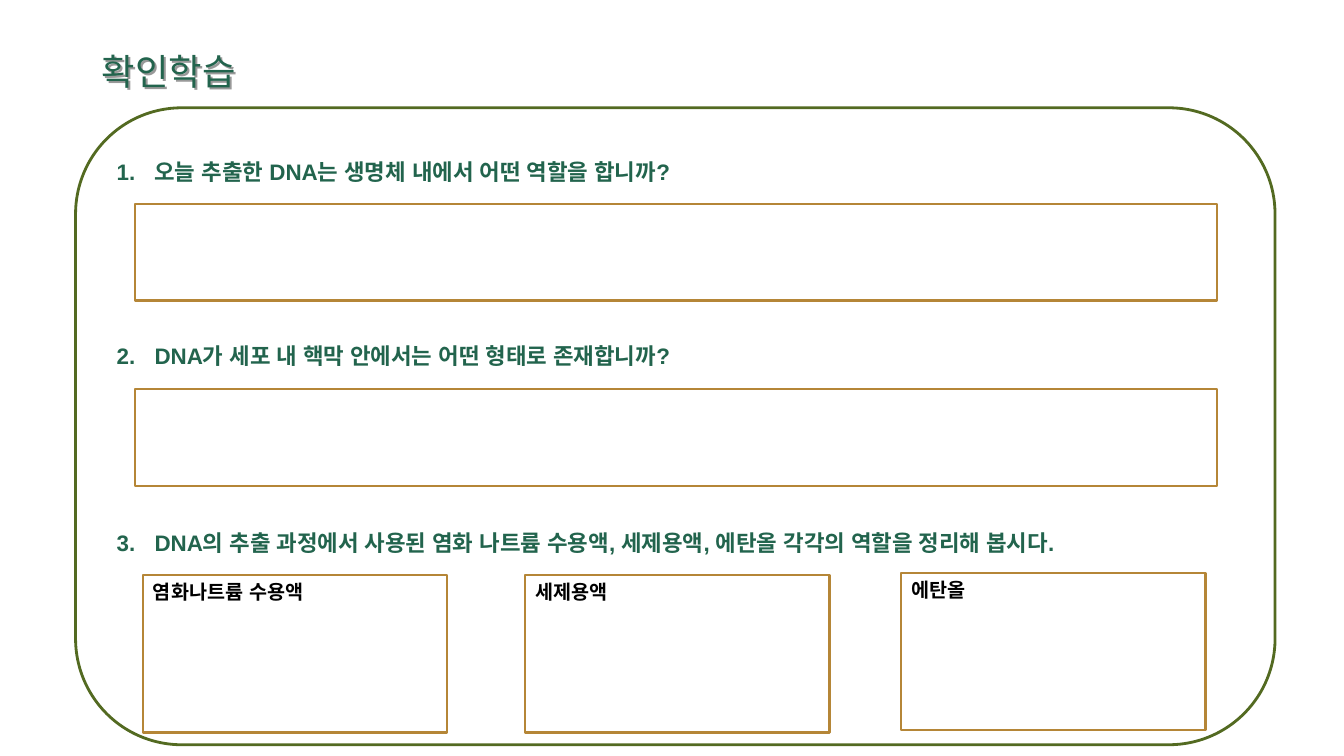
import pptx
import pptx.dml.color
import pptx.enum.shapes
import pptx.enum.text
import pptx.oxml
import pptx.oxml.ns
import pptx.util
from pptx.util import Pt

GREEN = pptx.dml.color.RGBColor(0x22, 0x64, 0x4D)
OLIVE = pptx.dml.color.RGBColor(0x53, 0x6A, 0x21)
OCHRE = pptx.dml.color.RGBColor(0xB5, 0x86, 0x37)
WHITE = pptx.dml.color.RGBColor(0xFF, 0xFF, 0xFF)
BLACK = pptx.dml.color.RGBColor(0x00, 0x00, 0x00)

HEADING_FONT = "TeX Gyre Adventor"
BODY_FONT = "Arial"
NAMESPACE = pptx.oxml.ns.nsdecls("a")

# Each question with the space above it
QUESTIONS = [
    ("오늘 추출한 DNA는 생명체 내에서 어떤 역할을 합니까?", 0),
    ("DNA가 세포 내 핵막 안에서는 어떤 형태로 존재합니까?", 102.4),
    ("DNA의 추출 과정에서 사용된 염화 나트륨 수용액, 세제용액, 에탄올 각각의 역할을 정리해 봅시다.", 105.3),
]
ANSWER_TOPS = [145.6, 278]
SOLUTIONS = [
    ("염화나트륨 수용액", 102.2, 411),
    ("세제용액", 375.1, 411),
    ("에탄올", 643.7, 409.5),
]


def place(shape, left, top, width, height):
    shape.left, shape.top = Pt(left), Pt(top)
    shape.width, shape.height = Pt(width), Pt(height)


def style_box(shape, line_color, line_width):
    shape.fill.solid()
    shape.fill.fore_color.rgb = WHITE
    shape.line.color.rgb = line_color
    shape.line.width = Pt(line_width)


def format_runs(paragraph, font_name, size, color, bold):
    for run in paragraph.runs:
        run.font.name = font_name
        run.font.size = Pt(size)
        run.font.bold = bold
        run.font.color.rgb = color
        # Korean characters and their spaces use the same font
        latin = run._r.rPr.find(pptx.oxml.ns.qn("a:latin"))
        latin.addnext(pptx.oxml.parse_xml(f'<a:ea {NAMESPACE} typeface="{font_name}"/>'))


def prepare_frame(text_frame, anchor, side_margin, edge_margin):
    text_frame.auto_size = pptx.enum.text.MSO_AUTO_SIZE.NONE
    text_frame.word_wrap = True
    text_frame.vertical_anchor = anchor
    text_frame.margin_left = text_frame.margin_right = Pt(side_margin)
    text_frame.margin_top = text_frame.margin_bottom = Pt(edge_margin)


def add_shadow(shape):
    shape._element.spPr.append(pptx.oxml.parse_xml(
        f'<a:effectLst {NAMESPACE}><a:outerShdw dist="25400" dir="2700000">'
        '<a:srgbClr val="000000"><a:alpha val="40000"/></a:srgbClr>'
        "</a:outerShdw></a:effectLst>"))


def number_paragraph(paragraph):
    properties = paragraph._p.get_or_add_pPr()
    properties.set("marL", str(Pt(27)))
    properties.set("indent", str(Pt(-27)))
    for xml in (f'<a:buFont {NAMESPACE} typeface="{BODY_FONT}"/>',
                f'<a:buAutoNum {NAMESPACE} type="arabicPeriod"/>'):
        properties.append(pptx.oxml.parse_xml(xml))


def fill_title(title):
    place(title, 65.5, 30.2, 676.8, 41)
    title.fill.background()
    add_shadow(title)
    text_frame = title.text_frame
    text_frame.text = "확인학습"
    prepare_frame(text_frame, pptx.enum.text.MSO_ANCHOR.MIDDLE, 7.2, 0)
    paragraph = text_frame.paragraphs[0]
    paragraph.alignment = pptx.enum.text.PP_ALIGN.LEFT
    format_runs(paragraph, HEADING_FONT, 26, GREEN, False)


def fill_question_panel(panel):
    place(panel, 54, 77, 856.8, 455)
    panel._element.spPr.append(pptx.oxml.parse_xml(
        f'<a:prstGeom {NAMESPACE} prst="roundRect"><a:avLst/></a:prstGeom>'))
    style_box(panel, OLIVE, 2)
    text_frame = panel.text_frame
    text_frame.text = "\n".join(question for question, _ in QUESTIONS)
    prepare_frame(text_frame, pptx.enum.text.MSO_ANCHOR.TOP, 7.2, 4.2)
    for paragraph, (_, space_above) in zip(text_frame.paragraphs, QUESTIONS):
        paragraph.alignment = pptx.enum.text.PP_ALIGN.LEFT
        paragraph.line_spacing = 1.5
        paragraph.space_before = Pt(space_above)
        paragraph.space_after = Pt(0)
        number_paragraph(paragraph)
        format_runs(paragraph, BODY_FONT, 16, GREEN, True)


def add_answer_box(slide, left, top, width, height, label=""):
    box = slide.shapes.add_shape(pptx.enum.shapes.MSO_SHAPE.RECTANGLE,
                                 Pt(left), Pt(top), Pt(width), Pt(height))
    box.shadow.inherit = False
    style_box(box, OCHRE, 1.5)
    if label:
        box.text_frame.text = label
        prepare_frame(box.text_frame, pptx.enum.text.MSO_ANCHOR.TOP, 7.2, 3.6)
        paragraph = box.text_frame.paragraphs[0]
        paragraph.alignment = pptx.enum.text.PP_ALIGN.LEFT
        format_runs(paragraph, HEADING_FONT, 14, BLACK, True)


def main():
    presentation = pptx.Presentation()
    presentation.slide_width, presentation.slide_height = Pt(960), Pt(540)
    slide = presentation.slides.add_slide(presentation.slide_layouts[1])

    # Title and numbered questions
    fill_title(slide.shapes.title)
    fill_question_panel(slide.placeholders[1])

    # Wide answer boxes for the first two questions
    for top in ANSWER_TOPS:
        add_answer_box(slide, 96.5, top, 772.6, 69.1)

    # One labelled box per solution for the third question
    for label, left, top in SOLUTIONS:
        add_answer_box(slide, left, top, 217.4, 112.3, label)

    presentation.save("out.pptx")


if __name__ == "__main__":
    main()
